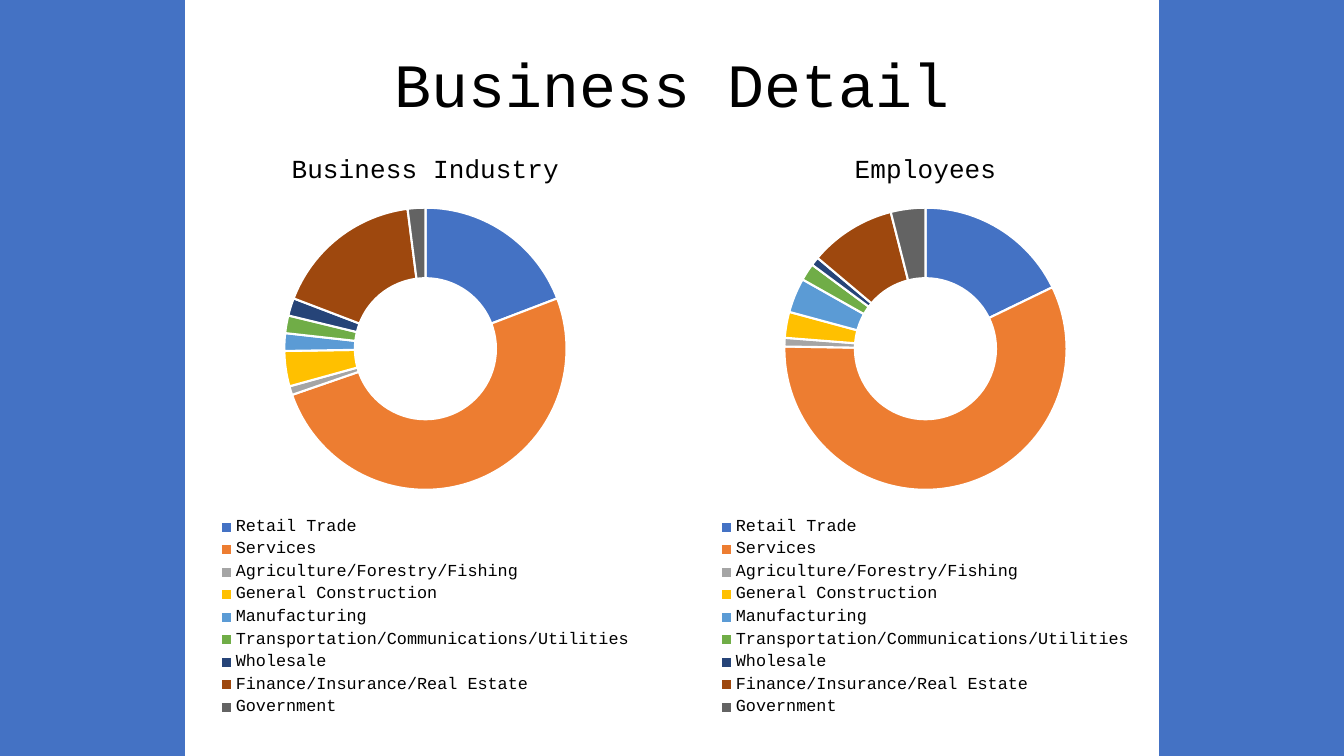
"""Builds a slide with two doughnut charts between blue side bands."""
from lxml import etree
from pptx import Presentation
from pptx import util as u
from pptx.chart.data import CategoryChartData
from pptx.dml.color import RGBColor
from pptx.enum import chart as charts, shapes, text
from pptx.oxml.ns import qn

BLACK = RGBColor(0x00, 0x00, 0x00)
WHITE = RGBColor(0xFF, 0xFF, 0xFF)
BLUE = RGBColor(0x44, 0x72, 0xC4)
SLICE_COLORS = [
    BLUE,
    RGBColor(0xED, 0x7D, 0x31),
    RGBColor(0xA5, 0xA5, 0xA5),
    RGBColor(0xFF, 0xC0, 0x00),
    RGBColor(0x5B, 0x9B, 0xD5),
    RGBColor(0x70, 0xAD, 0x47),
    RGBColor(0x26, 0x44, 0x78),
    RGBColor(0x9E, 0x48, 0x0E),
    RGBColor(0x63, 0x63, 0x63),
]
INDUSTRIES = [
    "Retail Trade",
    "Services",
    "Agriculture/Forestry/Fishing",
    "General Construction",
    "Manufacturing",
    "Transportation/Communications/Utilities",
    "Wholesale",
    "Finance/Insurance/Real Estate",
    "Government",
]
PAGE_WIDTH, PAGE_HEIGHT = 13.33, 7.5
BAND_WIDTH = 1.83
CHART_TOP, CHART_HEIGHT = 1.3, 5.87
RING_TOP, RING_SIZE = 0.76, 2.8
LEGEND_TOP, LEGEND_WIDTH, LEGEND_HEIGHT = 3.8, 4.1, 2.05


class SlideBuilder:
    """Holds the style and the current slide."""

    def __init__(self, page, font="Courier New"):
        self.page = page
        self.font = font

    def style_font(self, font, size):
        font.name = self.font
        font.size = u.Pt(size)
        font.color.rgb = BLACK

    def heading(self, words, left, top, width, height):
        box = self.page.shapes.add_textbox(
            u.Inches(left), u.Inches(top), u.Inches(width), u.Inches(height))
        frame = box.text_frame
        frame.word_wrap = True
        frame.vertical_anchor = text.MSO_ANCHOR.MIDDLE
        frame.text = words
        para = frame.paragraphs[0]
        para.alignment = text.PP_ALIGN.CENTER
        para.line_spacing = 0.9
        self.style_font(para.runs[0].font, 44)

    def band(self, left):
        band = self.page.shapes.add_shape(
            shapes.MSO_SHAPE.RECTANGLE, u.Inches(left), 0,
            u.Inches(BAND_WIDTH), u.Inches(PAGE_HEIGHT))
        band.shadow.inherit = False
        band.fill.solid()
        band.fill.fore_color.rgb = BLUE
        band.line.color.rgb = BLUE
        band.line.width = u.Pt(1)

    def place(self, element, index, chart_width, top, width, height, target=None):
        for old in element.findall(qn("c:layout")):
            element.remove(old)
        layout = etree.Element(qn("c:layout"))
        manual = etree.SubElement(layout, qn("c:manualLayout"))
        settings = [("layoutTarget", target)] if target else []
        settings += [
            ("xMode", "edge"),
            ("yMode", "edge"),
            ("x", (chart_width - width) / 2 / chart_width),
            ("y", top / CHART_HEIGHT),
            ("w", width / chart_width),
            ("h", height / CHART_HEIGHT),
        ]
        for name, value in settings:
            shown = value if isinstance(value, str) else f"{value:.4f}"
            etree.SubElement(manual, qn(f"c:{name}")).set("val", shown)
        element.insert(index, layout)

    def doughnut(self, name, values, left, width):
        data = CategoryChartData()
        data.categories = INDUSTRIES
        data.add_series(name, values)
        chart = self.page.shapes.add_chart(
            charts.XL_CHART_TYPE.DOUGHNUT, u.Inches(left), u.Inches(CHART_TOP),
            u.Inches(width), u.Inches(CHART_HEIGHT), data).chart
        self.style_font(chart.font, 10)

        chart.has_title = True
        title = chart.chart_title.text_frame
        title.text = name
        span = title.paragraphs[0].runs[0]
        self.style_font(span.font, 18.6)
        span.font.bold = False

        chart.has_legend = True
        chart.legend.position = charts.XL_LEGEND_POSITION.BOTTOM
        chart.legend.include_in_layout = False
        self.style_font(chart.legend.font, 12)

        plot = chart.plots[0]
        plot.vary_by_categories = True
        for index, color in enumerate(SLICE_COLORS):
            style = plot.series[0].points[index].format
            style.fill.solid()
            style.fill.fore_color.rgb = color
            style.line.color.rgb = WHITE
            style.line.width = u.Pt(1.5)

        root = chart.element
        self.place(root.find(".//" + qn("c:plotArea")), 0, width,
                   RING_TOP, RING_SIZE, RING_SIZE, "inner")
        self.place(root.find(".//" + qn("c:legend")), 1, width,
                   LEGEND_TOP, LEGEND_WIDTH, LEGEND_HEIGHT)


def main():
    deck = Presentation()
    deck.slide_width = u.Inches(PAGE_WIDTH)
    deck.slide_height = u.Inches(PAGE_HEIGHT)
    builder = SlideBuilder(deck.slides.add_slide(deck.slide_layouts[6]))

    builder.heading("Business Detail", 0.92, 0.14, 11.5, 1.45)
    builder.doughnut("Business Industry", [19, 50, 1, 4, 2, 2, 2, 17, 2], 1.94, 4.56)
    builder.doughnut("Employees", [18, 58, 1, 3, 4, 2, 1, 10, 4], 6.51, 5.34)
    for left in (0, PAGE_WIDTH - BAND_WIDTH):
        builder.band(left)

    deck.save("out.pptx")


if __name__ == "__main__":
    main()
